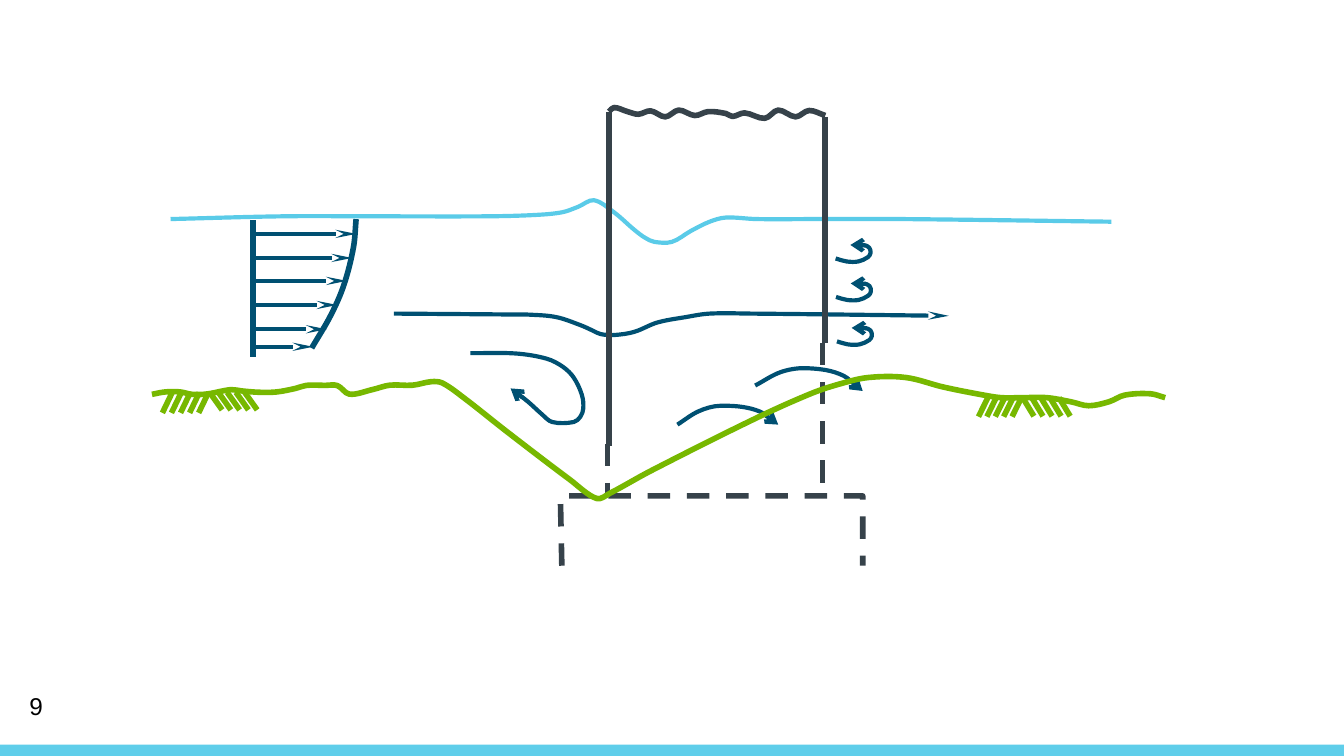
"""Build a slide showing flow and scour around a bridge pier."""
from math import dist

from lxml.etree import SubElement
from pptx import Presentation
from pptx.dml.color import RGBColor
from pptx.enum.dml import MSO_LINE
from pptx.enum.shapes import MSO_CONNECTOR, MSO_SHAPE
from pptx.enum.text import MSO_ANCHOR
from pptx.oxml.ns import qn
from pptx.util import Pt

rgb = RGBColor.from_string
WATER, FLOW, PIER, BED = "5ACBE8", "005072", "36424A", "77B800"
STEALTH = {"type": "stealth", "w": "sm", "len": "lg"}
ARROW = {"type": "arrow"}


def ink(stroke, color, width, dash=None, tail=None):
    """Style a line or outline and return it."""
    stroke.line.color.rgb = rgb(color)
    stroke.line.width = Pt(width)
    if dash:
        stroke.line.dash_style = dash
    properties = stroke._element.spPr
    if tail:
        SubElement(properties.find(qn("a:ln")), qn("a:tailEnd"), tail)
    if properties.find(qn("a:effectLst")) is None:
        SubElement(properties, qn("a:effectLst"))
    return stroke


def curve(part, points, color, width, tail=None, smooth=True, dash=None):
    """Draw an open outline through the points, rounded if smooth."""
    vertices = points[1:]
    if smooth:
        slopes = []
        for i in range(len(points)):
            near = points[max(i - 1, 0):i + 2]
            length = sum(dist(a, b) for a, b in zip(near, near[1:]))
            slopes.append([(b - a) / length for a, b in zip(near[0], near[-1])])
        vertices = []
        for a, b, leave, arrive in zip(points, points[1:], slopes, slopes[1:]):
            reach = dist(a, b) / 3
            vertices += [(a[0] + reach * leave[0], a[1] + reach * leave[1]),
                         (b[0] - reach * arrive[0], b[1] - reach * arrive[1]), b]
    builder = part.shapes.build_freeform(Pt(points[0][0]), Pt(points[0][1]))
    builder.add_line_segments([(Pt(x), Pt(y)) for x, y in vertices], close=False)
    outline = builder.convert_to_shape()
    outline.fill.background()
    if smooth:
        segments = list(outline._element.iter(qn("a:lnTo")))
        for i in range(0, len(segments), 3):
            segments[i].tag = qn("a:cubicBezTo")
            for other in segments[i + 1:i + 3]:
                segments[i].append(other[0])
                other.getparent().remove(other)
    ink(outline, color, width, dash, tail)


prs = Presentation()
prs.slide_width, prs.slide_height = Pt(720), Pt(405)
slide = prs.slides.add_slide(prs.slide_layouts[6])

footer_bar = slide.shapes.add_shape(MSO_SHAPE.RECTANGLE, 0, Pt(399), Pt(720), Pt(6))
footer_bar.shadow.inherit = False
footer_bar.fill.solid()
footer_bar.fill.fore_color.rgb = rgb("5FCEEA")
footer_bar.line.fill.background()

page_number = slide.shapes.add_textbox(Pt(8.6), Pt(367.2), Pt(162), Pt(21.6))
page_number.text_frame.word_wrap = True
page_number.text_frame.vertical_anchor = MSO_ANCHOR.MIDDLE
number_run = page_number.text_frame.paragraphs[0].add_run()
number_run.text = "9"
for name, value in {"name": "Arial", "size": Pt(13)}.items():
    setattr(number_run.font, name, value)
number_run.font.color.rgb = rgb("000000")

water_surface = [
    (91.4, 117.4), (151.9, 115.9), (198.7, 115.9), (261.4, 115.9), (286.6, 115.2),
    (301, 113.8), (309.6, 110.9), (318.2, 107.3), (329, 113.8), (339.8, 123.1),
    (345.6, 127.4), (350.6, 129.6), (360, 129.6), (370.1, 123.8), (380.2, 118.8),
    (388.8, 116.6), (405.4, 117.4), (437, 117.4), (483.1, 117.4), (595.4, 118.8)]
curve(slide, water_surface, WATER, 2.25)

profile = slide.shapes.add_group_shape()
curve(profile, [(167, 186.5), (177.1, 169.2), (184.3, 152.6), (189.4, 132.5),
                (190.8, 117.4)], FLOW, 3)
profile_lines = [(135.4, 118.1, 135.4, 191.5, 3, None)]
for tip, y in [(167.8, 185.8), (175, 176.4), (180.7, 163.4), (185.8, 150.5),
               (188.6, 138.2), (190.8, 125.3)]:
    profile_lines.append((135, y, tip, y, 2.25, STEALTH))
for x1, y1, x2, y2, width, tail in profile_lines:
    velocity = profile.shapes.add_connector(
        MSO_CONNECTOR.STRAIGHT, Pt(x1), Pt(y1), Pt(x2), Pt(y2))
    ink(velocity, FLOW, width, tail=tail)

currents = slide.shapes.add_group_shape()
main_stream = [
    (211, 168), (275, 168.5), (284.4, 168.6), (298.1, 169.9), (311, 174.2),
    (317.5, 177.1), (321.8, 179), (329, 179.5), (339.8, 177.8), (352.1, 172.8),
    (367.2, 169.9), (380.2, 168), (402.5, 168), (508.3, 169.2)]
horseshoe_vortex = [
    (252, 189.2), (276.5, 189.4), (293, 192.2), (301.7, 196.6), (307.4, 202.3),
    (311.8, 211.7), (312.5, 218.9), (311, 223.2), (307.4, 226.1), (295.9, 226.1),
    (290.2, 221.8), (283, 215.3), (273.6, 208.1)]
lower_hop = [(362.9, 227.5), (374.4, 220.3), (385.9, 217.4), (404.6, 219.6),
             (416.9, 227.5)]
upper_hop = [(404.6, 206.6), (418.3, 199.4), (431.3, 197.3), (449.3, 200.2),
             (462.2, 209.5)]
eddy = [(0, 0), (5.8, 1.6), (12.2, 1.6), (17.3, -0.7), (18.7, -2.9), (18, -5.8),
        (15.1, -7.2), (10.8, -7.4), (7.9, -7.2)]
curve(currents, main_stream, FLOW, 2.25, STEALTH)
for current in (horseshoe_vortex, lower_hop, upper_hop):
    curve(currents, current, FLOW, 2.25, ARROW)
for left, top in [(448.4, 182.9), (447.9, 159.1), (447.7, 138.5)]:
    curve(currents, [(left + x, top + y) for x, y in eddy], FLOW, 2.25, ARROW)

pier = slide.shapes.add_group_shape()
for x, top, bottom, dash in [(326.2, 59.8, 239, None), (442.1, 62.6, 183.6, None),
                             (325.4, 237.6, 266.4, MSO_LINE.DASH),
                             (440.6, 183.6, 265.7, MSO_LINE.DASH)]:
    wall = pier.shapes.add_connector(
        MSO_CONNECTOR.STRAIGHT, Pt(x), Pt(top), Pt(x), Pt(bottom))
    ink(wall, PIER, 3, dash)
foundation = [(301, 303.1), (300.2, 265.7), (462.2, 265.7), (462.2, 303.1)]
curve(pier, foundation, PIER, 3, smooth=False, dash=MSO_LINE.DASH)
broken_top = [
    (326.2, 59.8), (329, 57.6), (336.2, 59.8), (342, 61.2), (348.5, 59.4),
    (356.4, 62.6), (363.6, 59), (372.2, 61.9), (379.4, 59.8), (388.8, 60.8),
    (392.4, 62.4), (398.9, 60.5), (409.7, 63.4), (416.9, 59), (426.2, 62.6),
    (433.4, 59.2), (442.1, 61.9)]
curve(pier, broken_top, PIER, 3)

river_bed = slide.shapes.add_group_shape()
bed_line = [
    (81.4, 211.3), (88.6, 210), (96.5, 210), (103, 211.3), (110.9, 211.1),
    (123.8, 208.8), (129.6, 209.5), (139, 210.2), (148.3, 210), (158.4, 208.1),
    (164.2, 206.5), (174.2, 206.5), (180.7, 206.6), (187.2, 211.2), (199.4, 208.8),
    (208.8, 206.4), (221, 206.4), (231.1, 204.5), (236.9, 205.2), (248.4, 213.1),
    (272.2, 231.8), (305.3, 257), (319.7, 267.1), (326.9, 264.2), (349.2, 252),
    (403.9, 224.6), (434.2, 211), (449.3, 205.9), (465.1, 202.3), (485.3, 202.3),
    (505.4, 207.4), (527, 211.7), (536.4, 213.1), (547.2, 213.1), (560.9, 213.1),
    (573.8, 215.3), (583.2, 217.4), (594, 215.3), (602.6, 211.7), (616.3, 211),
    (624.2, 213.1)]
curve(river_bed, bed_line, BED, 3)
for left, top, step, dx, dy in [(92.2, 210.4, 4.86, -5.2, 10.8),
                                (112.3, 210.2, 4.7, 6.7, 9.4),
                                (529.2, 213.1, 4.5, -5, 10.1),
                                (547.9, 213.1, 4.86, 6, 9.9)]:
    for i in range(5):
        x = left + i * step
        hatch = river_bed.shapes.add_connector(
            MSO_CONNECTOR.STRAIGHT, Pt(x), Pt(top), Pt(x + dx), Pt(top + dy))
        ink(hatch, BED, 3)

prs.save("out.pptx")
